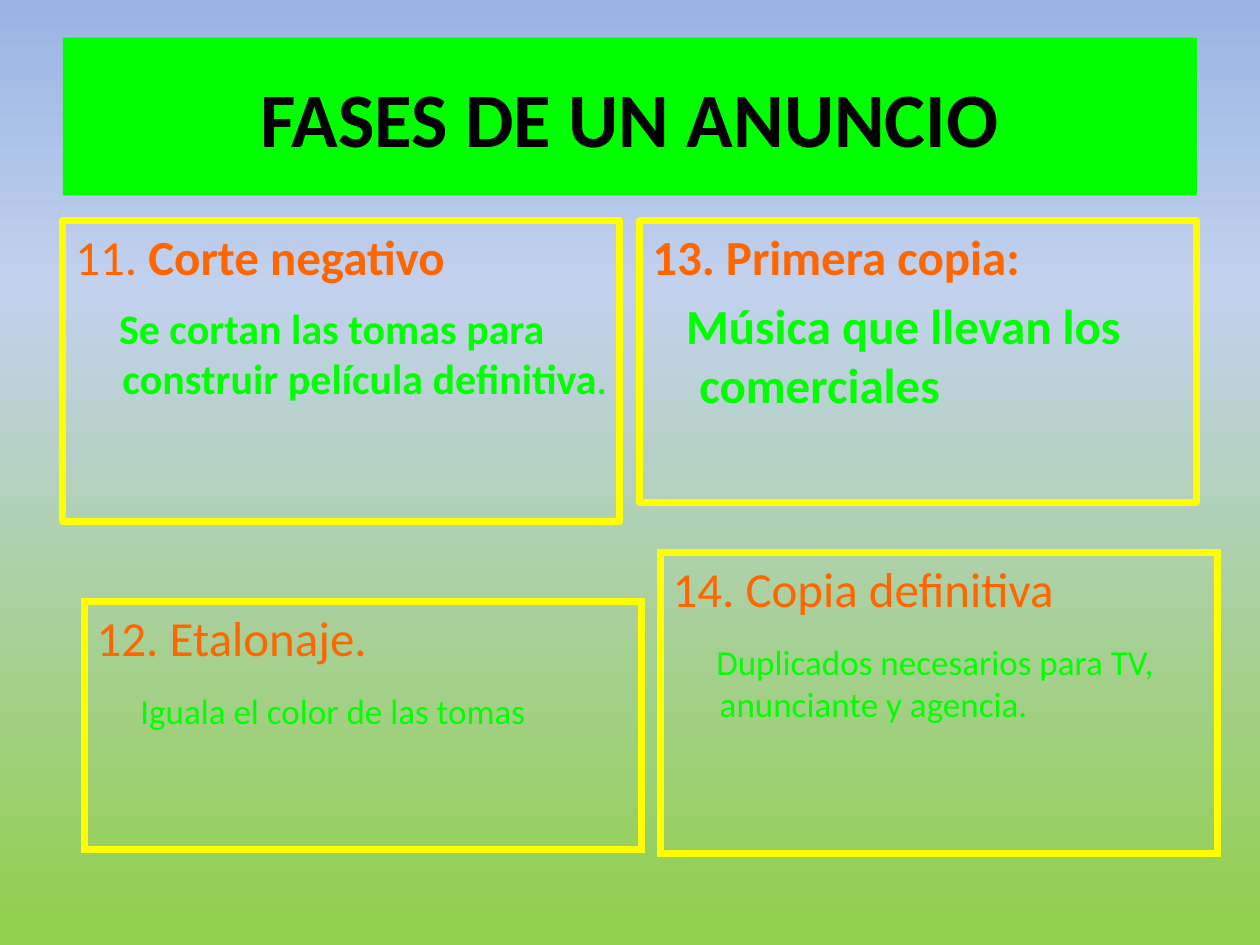
from copy import deepcopy

from lxml import etree
from pptx import Presentation
from pptx.dml.color import RGBColor
from pptx.enum import shapes, text
from pptx.oxml.ns import qn
from pptx.util import Cm, Pt

BLACK = RGBColor(0x00, 0x00, 0x00)
GREEN = RGBColor(0x00, 0xFF, 0x00)
ORANGE = RGBColor(0xFF, 0x66, 0x00)
YELLOW = RGBColor(0xFF, 0xFF, 0x00)
BACKGROUND_STOPS = [
    (0, RGBColor(0x9A, 0xB5, 0xE4)),
    (0.31, RGBColor(0xC2, 0xD1, 0xED)),
    (0.97, RGBColor(0x92, 0xD0, 0x50)),
]
HEADING_SIZE = 28
BOX_WIDTH = 11.23
TEXT_INDENT = 0.95


def add_run(paragraph, content, size=HEADING_SIZE, color=BLACK, bold=False):
    run = paragraph.add_run()
    run.text = content
    run.font.name = "Calibri"
    run.font.size = Pt(size)
    run.font.bold = bold
    run.font.color.rgb = color


def set_indent(paragraph, first_line):
    """Hang the paragraph at TEXT_INDENT, its first line shifted by first_line cm."""
    properties = paragraph._p.get_or_add_pPr()
    properties.set("marL", str(Cm(TEXT_INDENT)))
    properties.set("indent", str(Cm(first_line)))


presentation = Presentation()
presentation.slide_width, presentation.slide_height = Cm(25.4), Cm(19.05)
slide = presentation.slides.add_slide(presentation.slide_layouts[6])

# Background gradient, from top to bottom
background = slide.background.fill
background.gradient()
background.gradient_angle = 270
stop_list = slide.element.find(".//" + qn("a:gsLst"))
stop_list.append(deepcopy(stop_list[0]))
for stop, (position, color) in zip(background.gradient_stops, BACKGROUND_STOPS):
    stop.position = position
    stop.color.rgb = color

# Title
title = slide.shapes.add_shape(
    shapes.MSO_SHAPE.RECTANGLE, Cm(1.27), Cm(0.76), Cm(22.86), Cm(3.18))
title.shadow.inherit = False
title.fill.solid()
title.fill.fore_color.rgb = GREEN
title.line.fill.background()
title.text_frame.word_wrap = True
title.text_frame.vertical_anchor = text.MSO_ANCHOR.MIDDLE
paragraph = title.text_frame.paragraphs[0]
paragraph.alignment = text.PP_ALIGN.CENTER
add_run(paragraph, "FASES DE UN ANUNCIO", size=44, bold=True)

# Phases: left, top, height, square corners, heading runs, body runs, first line shift
# A run is (text, size, bold)
phases = [
    (1.27, 4.45, 6.07, False,
     [("11. ", 28, False), ("Corte negativo", 28, True)],
     [("Se cortan las tomas para construir película definitiva", 24, True),
      (".", 20, True)], -0.07),
    (12.9, 4.45, 5.69, False,
     [("13. Primera copia:", 28, True)],
     [("Música que llevan los comerciales", 28, True)], -0.27),
    (1.7, 12.12, 5, True,
     [("12. Etalonaje.", 28, False)],
     [("Iguala el color de las tomas", 20, False)], -0.07),
    (13.31, 11.13, 6.07, True,
     [("14. Copia definitiva", 28, False)],
     [("Duplicados necesarios para TV, anunciante y agencia.", 20, False)], -0.07),
]
for left, top, height, square, heading, body, first_line in phases:
    box = slide.shapes.add_textbox(Cm(left), Cm(top), Cm(BOX_WIDTH), Cm(height))
    box.line.color.rgb = YELLOW
    box.line.width = Pt(4)
    if square:
        etree.SubElement(box.line._get_or_add_ln(), qn("a:miter"), lim="800000")
    frame = box.text_frame
    frame.word_wrap = True

    paragraph = frame.paragraphs[0]
    set_indent(paragraph, -TEXT_INDENT)
    for content, size, bold in heading:
        add_run(paragraph, content, size=size, color=ORANGE, bold=bold)

    paragraph = frame.add_paragraph()
    set_indent(paragraph, first_line)
    # Smaller body text starts lower, on the baseline of heading-sized text
    paragraph.space_before = Pt(5.6 + 0.95 * (HEADING_SIZE - body[0][1]))
    for content, size, bold in body:
        add_run(paragraph, content, size=size, color=GREEN, bold=bold)

presentation.save("out.pptx")
